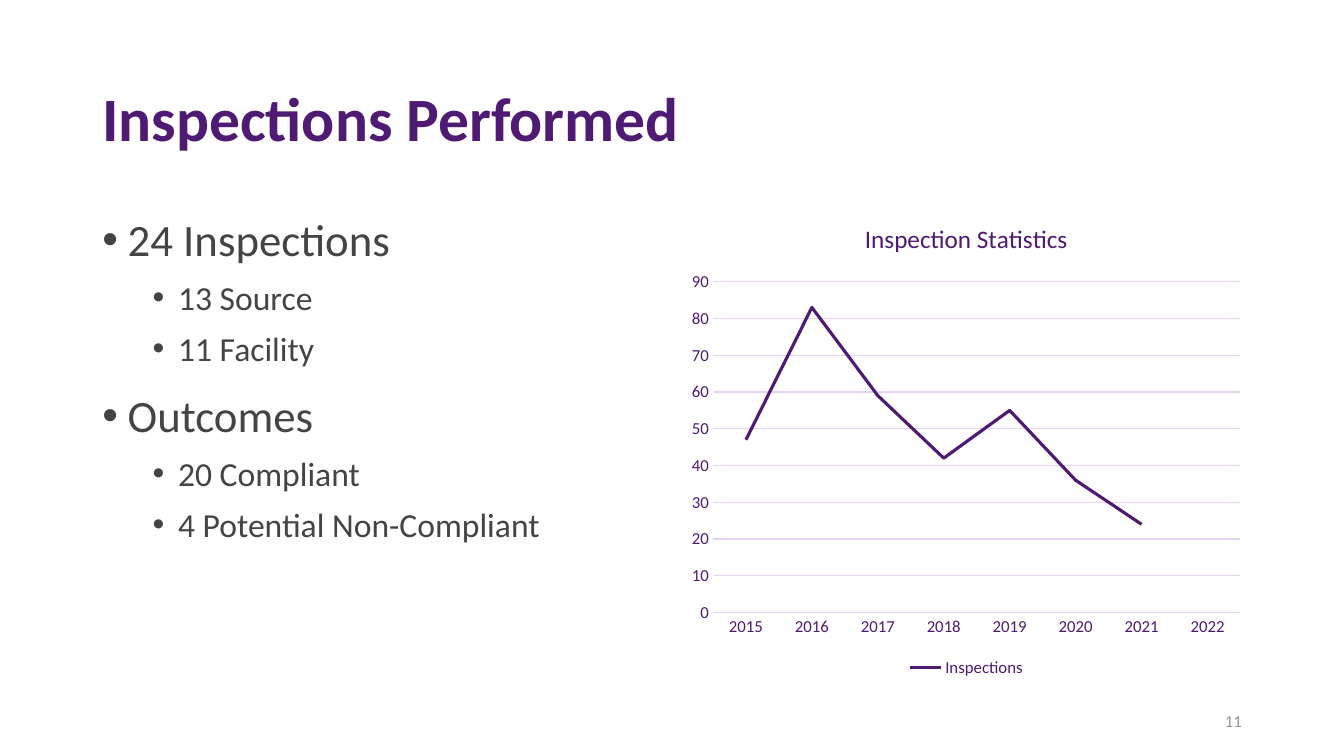
"""Build the Inspections Performed slide with its outline and line chart."""
from dataclasses import dataclass

from lxml import etree
from pptx import Presentation
from pptx.chart.data import CategoryChartData
from pptx.dml.color import RGBColor
from pptx.enum import chart as charts, text
from pptx.oxml import ns
from pptx.util import Cm, Pt

PURPLE = RGBColor(0x4E, 0x1A, 0x74)
LILAC = RGBColor(0xE6, 0xD2, 0xF5)
GREY = RGBColor(0x44, 0x44, 0x44)
MUTED = RGBColor(0x97, 0x8D, 0xA6)
FONT = "Calibri"
LEFT, TOP, COLUMN_WIDTH, COLUMN_HEIGHT = 2.33, 5.08, 14.4, 12.09
CHART_LEFT = 17.15


@dataclass(frozen=True)
class Line:
    """One paragraph of text and its format."""
    words: str
    size: float
    color: RGBColor
    bold: bool = False
    level: int = 0
    bullet: bool = False
    before: float = 0
    spacing: float = 1.1
    align: text.PP_ALIGN = text.PP_ALIGN.LEFT


@dataclass(frozen=True)
class Box:
    """A text box, placed in centimetres."""
    left: float
    top: float
    width: float
    height: float
    anchor: text.MSO_ANCHOR
    lines: tuple[Line, ...]


def topic(words: str, before: float = 10) -> Line:
    """Return a first-level bullet."""
    return Line(words, 32, GREY, bullet=True, before=before)


def detail(words: str) -> Line:
    """Return a second-level bullet."""
    return Line(words, 24, GREY, level=1, bullet=True, before=5)


BOXES = (
    Box(LEFT, 1.02, 29.21, 3.68, text.MSO_ANCHOR.MIDDLE,
        (Line("Inspections Performed", 44, PURPLE, bold=True),)),
    Box(LEFT, TOP, COLUMN_WIDTH, COLUMN_HEIGHT, text.MSO_ANCHOR.TOP,
        (topic("24 Inspections", before=0), detail("13 Source"), detail("11 Facility"),
         topic("Outcomes"), detail("20 Compliant"), detail("4 Potential Non-Compliant"))),
    Box(23.93, 17.65, 7.62, 1.02, text.MSO_ANCHOR.MIDDLE,
        (Line("11", 12, MUTED, spacing=1, align=text.PP_ALIGN.RIGHT),)),
)


def apply(target, values: dict) -> None:
    """Set every attribute named in the values."""
    for name, value in values.items():
        setattr(target, name, value)


def style_font(font, size: float, color: RGBColor, bold: bool = False) -> None:
    """Set the typeface, size, weight and colour of a font."""
    apply(font, {"name": FONT, "size": Pt(size), "bold": bold})
    font.color.rgb = color


def add_bullet(paragraph, level: int) -> None:
    """Give a paragraph a hanging bullet for its level."""
    properties = paragraph._p.get_or_add_pPr()
    properties.set("marL", str(Cm(0.64 + 1.27 * level)))
    properties.set("indent", str(-Cm(0.64)))
    font = etree.SubElement(properties, ns.qn("a:buFont"))
    font.set("typeface", "Arial")
    etree.SubElement(properties, ns.qn("a:buChar")).set("char", "•")


def add_text(slide, box: Box) -> None:
    """Draw a text box with its paragraphs."""
    shape = slide.shapes.add_textbox(Cm(box.left), Cm(box.top), Cm(box.width), Cm(box.height))
    frame = shape.text_frame
    apply(frame, {"word_wrap": True, "vertical_anchor": box.anchor})
    for index, line in enumerate(box.lines):
        paragraph = frame.add_paragraph() if index else frame.paragraphs[0]
        if line.bullet:
            add_bullet(paragraph, line.level)
        apply(paragraph, {"level": line.level, "line_spacing": line.spacing,
                          "space_before": Pt(line.before), "alignment": line.align})
        run = paragraph.add_run()
        run.text = line.words
        style_font(run.font, line.size, line.color, line.bold)


def style_line(line, color: RGBColor, width: float) -> None:
    """Set the colour and width of a line."""
    line.color.rgb = color
    line.width = Pt(width)


def add_statistics(slide) -> None:
    """Draw the line chart of inspections per year."""
    data = CategoryChartData()
    data.categories = [str(year) for year in range(2015, 2023)]
    data.add_series("Inspections", (47, 83, 59, 42, 55, 36, 24, None))
    chart = slide.shapes.add_chart(
        charts.XL_CHART_TYPE.LINE, Cm(CHART_LEFT), Cm(TOP),
        Cm(COLUMN_WIDTH), Cm(COLUMN_HEIGHT), data).chart
    style_font(chart.font, 12, PURPLE)

    apply(chart, {"has_title": True, "has_legend": True})
    title = chart.chart_title.text_frame
    title.text = "Inspection Statistics"
    style_font(title.paragraphs[0].runs[0].font, 18, PURPLE)
    apply(chart.legend, {"position": charts.XL_LEGEND_POSITION.BOTTOM,
                         "include_in_layout": False})
    style_font(chart.legend.font, 12, PURPLE)

    for axis in (chart.category_axis, chart.value_axis):
        apply(axis, {"major_tick_mark": charts.XL_TICK_MARK.NONE,
                     "minor_tick_mark": charts.XL_TICK_MARK.NONE})
        style_font(axis.tick_labels.font, 12, PURPLE)
    style_line(chart.category_axis.format.line, LILAC, 0.75)
    apply(chart.value_axis, {"minimum_scale": 0, "maximum_scale": 90, "major_unit": 10,
                             "has_major_gridlines": True})
    chart.value_axis.format.line.fill.background()
    style_line(chart.value_axis.major_gridlines.format.line, LILAC, 0.75)

    plot = chart.plots[0]
    plot.vary_by_categories = False
    series = plot.series[0]
    series.smooth = False
    series.marker.style = charts.XL_MARKER_STYLE.NONE
    style_line(series.format.line, PURPLE, 2.25)


def main() -> None:
    """Build and save the presentation."""
    presentation = Presentation()
    apply(presentation, {"slide_width": Cm(33.87), "slide_height": Cm(19.05)})
    slide = presentation.slides.add_slide(presentation.slide_layouts[6])
    for box in BOXES:
        add_text(slide, box)
    add_statistics(slide)
    presentation.save("out.pptx")


if __name__ == "__main__":
    main()
